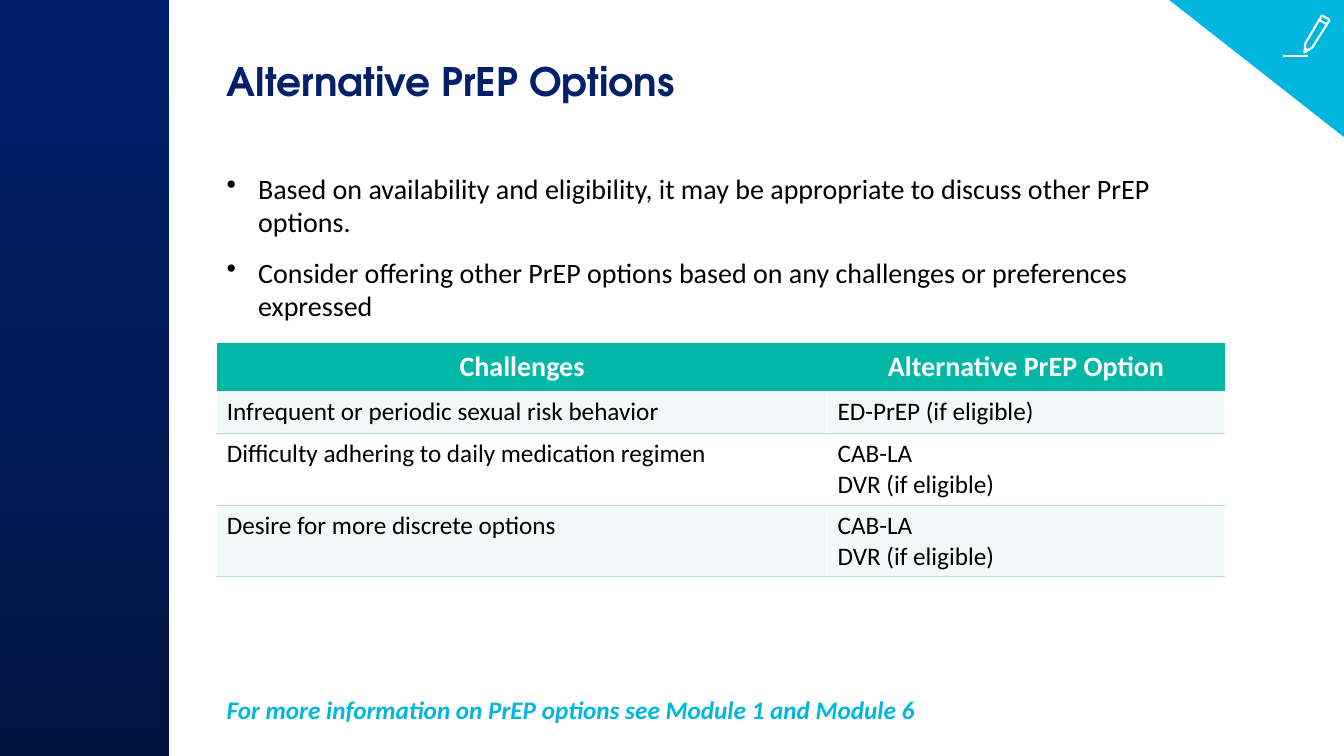
"""Build the slide on alternative PrEP options."""
from copy import deepcopy
from typing import NamedTuple, Optional

from lxml import etree
from pptx import Presentation
from pptx.dml.color import RGBColor
from pptx.enum.shapes import MSO_CONNECTOR, MSO_SHAPE
from pptx.enum.text import MSO_ANCHOR, MSO_AUTO_SIZE, PP_ALIGN
from pptx.oxml.ns import qn
from pptx.util import Emu, Pt

CELL = 76200
COLUMNS, ROWS = 160, 90
LEFT, WIDTH = 25.8, 120

NAVY = RGBColor(0x02, 0x21, 0x69)
BAR_DARK = RGBColor(0x00, 0x13, 0x3F)
BAR_MIDDLE = RGBColor(0x00, 0x1B, 0x5A)
BAR_LIGHT = RGBColor(0x00, 0x20, 0x6B)
CYAN = RGBColor(0x00, 0xB5, 0xDE)
TEAL = RGBColor(0x00, 0xB8, 0xA5)
PALE = RGBColor(0xF2, 0xF9, 0xF8)
RULE = RGBColor(0xB0, 0xDF, 0xDB)
WHITE = RGBColor(0xFF, 0xFF, 0xFF)
BLACK = RGBColor(0x00, 0x00, 0x00)

RECTANGLE, TRIANGLE = MSO_SHAPE.RECTANGLE, MSO_SHAPE.RIGHT_TRIANGLE
STRAIGHT = MSO_CONNECTOR.STRAIGHT
TOP, MIDDLE = MSO_ANCHOR.TOP, MSO_ANCHOR.MIDDLE
CENTER, LEFT_ALIGN = PP_ALIGN.CENTER, PP_ALIGN.LEFT
NO_FIT = MSO_AUTO_SIZE.NONE

TITLE_FONT = {"name": "TeX Gyre Adventor", "size": Pt(28), "bold": True}
BODY_FONT = {"name": "Calibri", "size": Pt(20)}
HEADER_FONT = {"name": "Calibri", "size": Pt(20), "bold": True}
CELL_FONT = {"name": "Calibri", "size": Pt(18), "bold": False}
NOTE_FONT = {"name": "Calibri", "size": Pt(18), "bold": True, "italic": True}


class Area(NamedTuple):
    """A rectangle in grid columns and rows."""
    left: float
    top: float
    width: float
    height: float


class Row(NamedTuple):
    """One table row with its height in grid rows."""
    height: float
    fill: RGBColor
    texts: tuple[str, str]


class Stroke(NamedTuple):
    """A straight stroke of the pencil icon in grid units."""
    start: tuple[float, float]
    end: tuple[float, float]


BULLETS = (
    "Based on availability and eligibility, it may be appropriate to discuss other PrEP options.",
    "Consider offering other PrEP options based on any challenges or preferences expressed",
)
TABLE_COLUMNS = (72.72, 47.28)
TABLE_ROWS = (
    Row(5.76, TEAL, ("Challenges", "Alternative PrEP Option")),
    Row(5.1, PALE, ("Infrequent or periodic sexual risk behavior", "ED-PrEP (if eligible)")),
    Row(8.5, WHITE, ("Difficulty adhering to daily medication regimen", "CAB-LA\nDVR (if eligible)")),
    Row(8.5, PALE, ("Desire for more discrete options", "CAB-LA\nDVR (if eligible)")),
)
PENCIL = ((156.24, 5.64), (155.28, 6.24), (155.4, 5.16), (157.32, 1.92),
          (157.44, 1.86), (158.16, 2.28), (158.28, 2.4))
STROKES = (
    Stroke((157.08, 2.4), (157.92, 2.88)),
    Stroke((155.4, 5.76), (155.64, 6)),
    Stroke((152.76, 6.72), (155.76, 6.72)),
)


def grid(cells: float) -> Emu:
    """Turn grid cells into a length."""
    return Emu(round(cells * CELL))


def place(area: Area) -> list[Emu]:
    """Turn an area into left, top, width and height."""
    return [grid(value) for value in area]


def apply(target, values: dict) -> None:
    """Set every attribute in the dict."""
    for name, value in values.items():
        setattr(target, name, value)


def write(frame, texts, font: dict, color: RGBColor, layout: Optional[dict] = None,
          bullet: bool = False) -> None:
    """Write one paragraph per text."""
    for index, text in enumerate(texts):
        para = frame.paragraphs[0] if index == 0 else frame.add_paragraph()
        if bullet:
            properties = para._p.get_or_add_pPr()
            apply_indent = {"marL": grid(3.75), "indent": -grid(3.75)}
            for name, value in apply_indent.items():
                properties.set(name, str(value))
            etree.SubElement(properties, qn("a:buChar")).set("char", "•")
            para.space_before = Pt(6 if index else 0)
            para.space_after = Pt(6)
        apply(para, layout or {})
        span = para.add_run()
        span.text = text
        apply(span.font, font)
        span.font.color.rgb = color


def add_text(slide, area: Area, texts, font: dict, color: RGBColor, bullet: bool = False) -> None:
    """Add a wrapped text box."""
    box = slide.shapes.add_textbox(*place(area))
    box.text_frame.word_wrap = True
    write(box.text_frame, texts, font, color, bullet=bullet)


def add_panel(slide, kind, area: Area):
    """Add a preset shape without line or shadow."""
    panel = slide.shapes.add_shape(kind, *place(area))
    panel.shadow.inherit = False
    panel.line.fill.background()
    return panel


def add_bar(slide) -> None:
    """Add the gradient bar on the left."""
    bar = add_panel(slide, RECTANGLE, Area(0, 0, 20.16, ROWS))
    bar.fill.gradient()
    bar.fill.gradient_angle = 90
    first = next(bar._element.iter(qn("a:gs")))
    first.addnext(deepcopy(first))
    shades = ((0, BAR_DARK), (0.5, BAR_MIDDLE), (1, BAR_LIGHT))
    for stop, (position, color) in zip(bar.fill.gradient_stops, shades):
        stop.position = position
        stop.color.rgb = color


def add_border(cell, side: str, color: Optional[RGBColor], width: float) -> None:
    """Add one border to a table cell."""
    line = etree.SubElement(cell._tc.get_or_add_tcPr(), qn(f"a:ln{side}"), w=str(Pt(width)))
    if color is None:
        etree.SubElement(line, qn("a:noFill"))
    else:
        fill = etree.SubElement(line, qn("a:solidFill"))
        etree.SubElement(fill, qn("a:srgbClr")).set("val", str(color))


def add_options_table(slide) -> None:
    """Add the table of challenges and options."""
    area = Area(LEFT, 40.8, WIDTH, sum(row.height for row in TABLE_ROWS))
    table = slide.shapes.add_table(len(TABLE_ROWS), len(TABLE_COLUMNS), *place(area)).table
    apply(table, {"first_row": False, "horz_banding": False})
    for column, width in zip(table.columns, TABLE_COLUMNS):
        column.width = grid(width)
    for index, row in enumerate(TABLE_ROWS):
        header = index == 0
        table.rows[index].height = grid(row.height)
        for cell, text in zip(table.rows[index].cells, row.texts):
            for side in "LRTB":
                color, width = (WHITE, 1) if side in "LR" else (RULE, 0.83)
                hidden = header or (index == 1 and side == "T")
                add_border(cell, side, None if hidden else color, width)
            cell.fill.solid()
            cell.fill.fore_color.rgb = row.fill
            cell.vertical_anchor = MIDDLE if header else TOP
            write(cell.text_frame, text.split("\n"), HEADER_FONT if header else CELL_FONT,
                  WHITE if header else BLACK, {"alignment": CENTER if header else LEFT_ALIGN})


def add_pencil(slide) -> None:
    """Add the pencil icon in the corner."""
    icon = slide.shapes.add_group_shape()
    points = [(grid(across), grid(down)) for across, down in PENCIL]
    builder = icon.shapes.build_freeform(*points[0])
    builder.add_line_segments(points[1:], close=True)
    outline = builder.convert_to_shape()
    outline.shadow.inherit = False
    outline.fill.background()
    parts = [outline]
    for stroke in STROKES:
        ends = [grid(value) for value in stroke.start + stroke.end]
        connector = icon.shapes.add_connector(STRAIGHT, *ends)
        etree.SubElement(connector._element.spPr, qn("a:effectLst"))
        parts.append(connector)
    for part in parts:
        part.line.color.rgb = WHITE
        part.line.width = Pt(1.5)


def main() -> None:
    """Build and save the deck."""
    deck = Presentation()
    apply(deck, {"slide_width": grid(COLUMNS), "slide_height": grid(ROWS)})
    slide = deck.slides.add_slide(deck.slide_layouts[5])
    add_bar(slide)
    title = slide.shapes.title
    apply(title, dict(zip(("left", "top", "width", "height"), place(Area(LEFT, 6.84, WIDTH, 11.04)))))
    apply(title.text_frame, {"vertical_anchor": TOP, "word_wrap": True, "auto_size": NO_FIT})
    write(title.text_frame, ["Alternative PrEP Options"], TITLE_FONT, NAVY,
          {"alignment": LEFT_ALIGN, "line_spacing": 0.9})
    add_text(slide, Area(LEFT, 19.8, WIDTH, 62.16), BULLETS, BODY_FONT, BLACK, bullet=True)
    add_options_table(slide)
    add_text(slide, Area(LEFT, 82.08, 115.32, 4.8),
             ["For more information on PrEP options see Module 1 and Module 6"], NOTE_FONT, CYAN)
    corner = add_panel(slide, TRIANGLE, Area(139.2, 0, 20.8, 16.32))
    corner.rotation = 180
    corner.fill.solid()
    corner.fill.fore_color.rgb = CYAN
    add_pencil(slide)
    deck.save("out.pptx")


if __name__ == "__main__":
    main()
